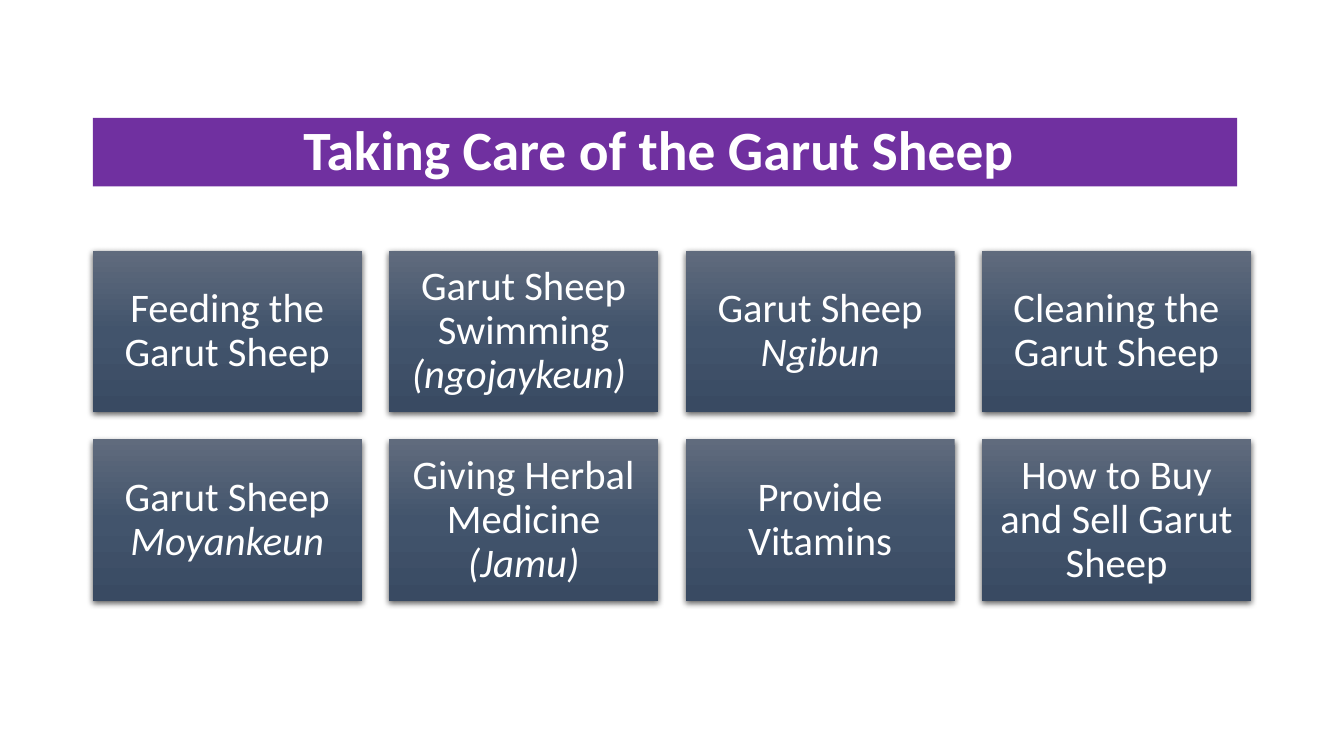
from dataclasses import dataclass

from pptx import Presentation
from pptx.dml.color import RGBColor
from pptx.enum.shapes import MSO_SHAPE as Shape
from pptx.enum.text import MSO_ANCHOR as Anchor, MSO_AUTO_SIZE as AutoSize, PP_ALIGN as Align
from pptx.oxml import parse_xml
from pptx.oxml.ns import nsdecls, qn
from pptx.util import Inches, Pt


@dataclass(frozen=True)
class Theme:
    font: str = "Calibri"
    text: str = "FFFFFF"
    banner: str = "7030A0"
    tile_stops: tuple = ((0, "606B7D"), (50, "42546C"), (100, "394A62"))
    shadow: str = "000000"
    title_size: float = 39.6
    tile_size: float = 29


def apply(target, values):
    for name, value in values.items():
        setattr(target, name, value)


class SlideBuilder:
    def __init__(self, deck, theme):
        self.theme = theme
        self.slide = deck.slides.add_slide(deck.slide_layouts[5])

    def set_text(self, frame, runs, size, bold=False, inset=None):
        """Fill a frame with one centred paragraph of (text, italic) runs."""
        layout = {"word_wrap": True, "auto_size": AutoSize.NONE,
                  "vertical_anchor": Anchor.MIDDLE}
        if inset is not None:
            sides = ("left", "top", "right", "bottom")
            layout.update({f"margin_{side}": Inches(inset) for side in sides})
        apply(frame, layout)
        paragraph = frame.paragraphs[0]
        apply(paragraph, {"alignment": Align.CENTER, "line_spacing": 0.9})
        for text, italic in runs:
            run = paragraph.add_run()
            run.text = text
            apply(run.font, {"name": self.theme.font, "size": Pt(size),
                             "bold": bold, "italic": italic})
            run.font.color.rgb = RGBColor.from_string(self.theme.text)

    def title(self, text, left, top, width, height):
        banner = self.slide.shapes.title
        apply(banner, {"left": Inches(left), "top": Inches(top),
                       "width": Inches(width), "height": Inches(height)})
        banner.fill.solid()
        banner.fill.fore_color.rgb = RGBColor.from_string(self.theme.banner)
        self.set_text(banner.text_frame, [(text, False)], self.theme.title_size, bold=True)

    def tile(self, runs, left, top, width, height):
        tile = self.slide.shapes.add_shape(
            Shape.RECTANGLE, *map(Inches, (left, top, width, height)))
        tile.line.fill.background()
        self.shade(tile)
        self.drop_shadow(tile)
        self.set_text(tile.text_frame, runs, self.theme.tile_size, inset=0.12)

    def shade(self, shape):
        """Three-stop gradient running from top to bottom."""
        shape.fill.gradient()
        shape.fill.gradient_angle = 270
        stops = shape.element.spPr.find(".//" + qn("a:gsLst"))
        for stop in list(stops):
            stops.remove(stop)
        for percent, color in self.theme.tile_stops:
            stops.append(parse_xml(
                f'<a:gs {nsdecls("a")} pos="{percent * 1000}">'
                f'<a:srgbClr val="{color}"/></a:gs>'))

    def drop_shadow(self, shape):
        shape.shadow.inherit = False
        shape.element.spPr.find(qn("a:effectLst")).append(parse_xml(
            f'<a:outerShdw {nsdecls("a")} blurRad="{Pt(4.5)}" dist="{Pt(1.5)}" '
            f'dir="5400000" algn="ctr" rotWithShape="0">'
            f'<a:srgbClr val="{self.theme.shadow}"><a:alpha val="63000"/></a:srgbClr>'
            f'</a:outerShdw>'))


# Care topics as (text, italic) runs, row by row
CARE_TOPICS = [
    [("Feeding the Garut Sheep", False)],
    [("Garut Sheep Swimming ", False), ("(ngojaykeun) ", True)],
    [("Garut Sheep ", False), ("Ngibun", True)],
    [("Cleaning the Garut Sheep", False)],
    [("Garut Sheep ", False), ("Moyankeun", True)],
    [("Giving Herbal Medicine ", False), ("(Jamu)", True)],
    [("Provide Vitamins", False)],
    [("How to Buy and Sell Garut Sheep", False)],
]
COLUMNS = 4
LEFT, TOP = 0.92, 2.49
TILE_WIDTH, TILE_HEIGHT, GAP = 2.67, 1.6, 0.27


def main():
    deck = Presentation()
    apply(deck, {"slide_width": Inches(13.33), "slide_height": Inches(7.5)})
    builder = SlideBuilder(deck, Theme())

    # Title banner
    builder.title("Taking Care of the Garut Sheep ", LEFT, 1.17, 11.35, 0.68)

    # Grid of care topics
    for index, topic in enumerate(CARE_TOPICS):
        row, column = divmod(index, COLUMNS)
        builder.tile(topic, LEFT + column * (TILE_WIDTH + GAP),
                     TOP + row * (TILE_HEIGHT + GAP), TILE_WIDTH, TILE_HEIGHT)

    deck.save("out.pptx")


if __name__ == "__main__":
    main()
